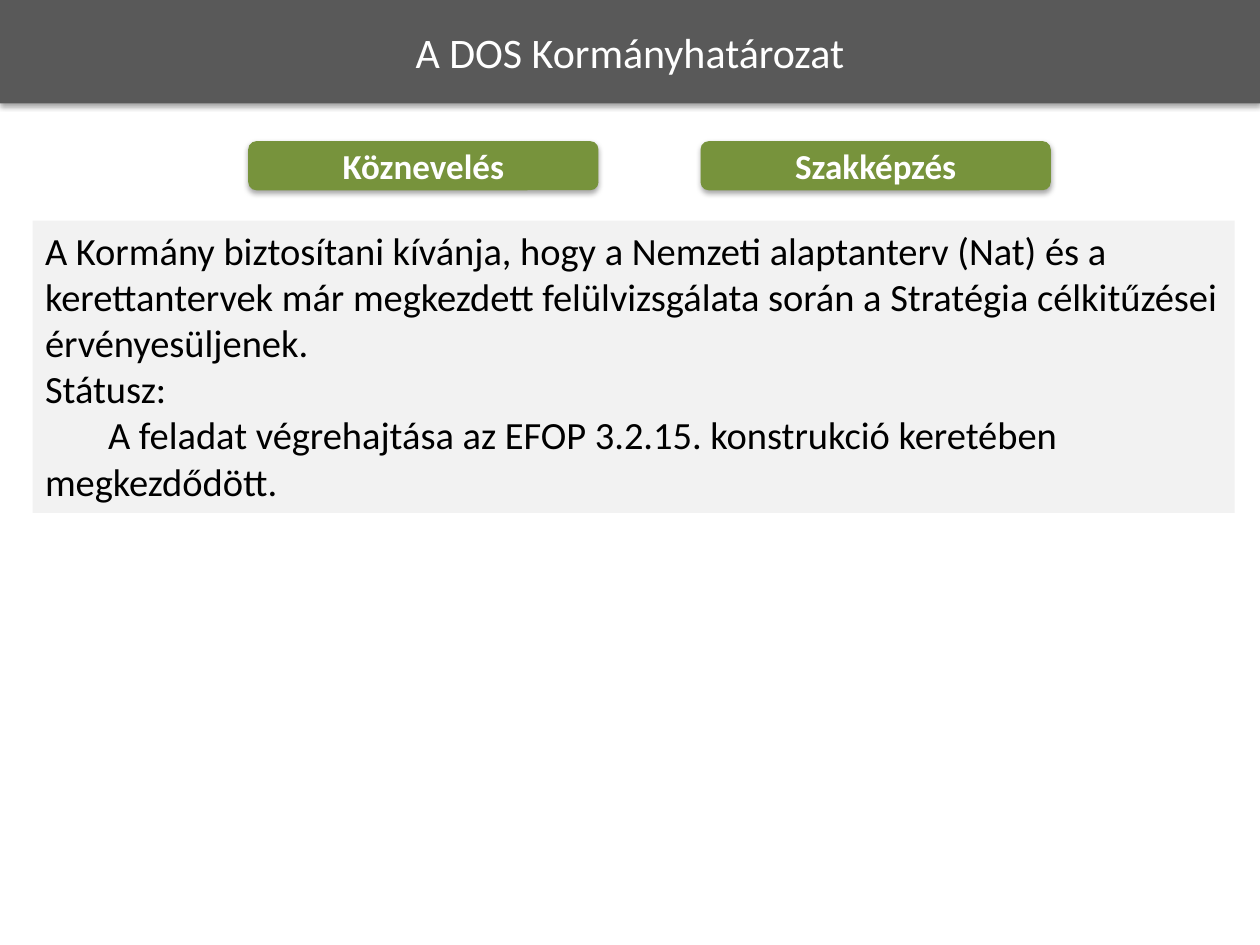
from lxml import etree
from pptx import Presentation
from pptx.dml.color import RGBColor
from pptx.enum.shapes import MSO_SHAPE as Shape
from pptx.enum.text import MSO_ANCHOR as Anchor, MSO_AUTO_SIZE as AutoSize, PP_ALIGN as Align
from pptx.oxml import parse_xml
from pptx.oxml.ns import nsdecls, qn
from pptx.util import Inches, Pt

COLOURS = {"banner": "595959", "tag": "77933C", "panel": "F2F2F2",
           "light": "FFFFFF", "dark": "000000", "shadow": "000000"}
WIDTH, HEIGHT = 10, 7.5


class Deck:
    """Holds the style and the current slide; lengths are shares of the slide."""
    font = "Calibri"

    def __init__(self):
        self.prs = Presentation()
        self.prs.slide_width, self.prs.slide_height = Inches(WIDTH), Inches(HEIGHT)
        self.slide = self.prs.slides.add_slide(self.prs.slide_layouts[6])

    def block(self, kind, area, fill, paragraphs, size, colour,
              align=Align.LEFT, anchor=Anchor.MIDDLE, bold=False):
        left, top, width, height = area
        block = self.slide.shapes.add_shape(
            kind, Inches(left * WIDTH), Inches(top * HEIGHT),
            Inches(width * WIDTH), Inches(height * HEIGHT))
        block.shadow.inherit = False
        block.fill.solid()
        block.fill.fore_color.rgb = RGBColor.from_string(COLOURS[fill])
        block.line.fill.background()
        frame = block.text_frame
        frame.word_wrap = True
        frame.vertical_anchor = anchor
        for number, text in enumerate(paragraphs):
            paragraph = frame.add_paragraph() if number else frame.paragraphs[0]
            paragraph.text = text
            paragraph.alignment = align
            font = paragraph.font
            font.name, font.size, font.bold = self.font, Pt(size), bold
            font.color.rgb = RGBColor.from_string(COLOURS[colour])
        return block

    def drop_shadow(self, block):
        effects = block._element.spPr.find(qn("a:effectLst"))
        shadow = parse_xml(
            f'<a:outerShdw {nsdecls("a")} blurRad="{Pt(3.1)}" dist="{Pt(1.8)}" '
            'dir="5400000" rotWithShape="0"/>')
        colour = etree.SubElement(shadow, qn("a:srgbClr"), val=COLOURS["shadow"])
        etree.SubElement(colour, qn("a:alpha"), val="35000")
        effects.append(shadow)

    def banner(self, area, title):
        self.drop_shadow(self.block(Shape.RECTANGLE, area, "banner", [title],
                                    24, "light", Align.CENTER))

    def tag(self, area, label):
        self.drop_shadow(self.block(Shape.ROUNDED_RECTANGLE, area, "tag", [label],
                                    20, "light", Align.CENTER, bold=True))

    def panel(self, area, paragraphs, indented):
        panel = self.block(Shape.RECTANGLE, area, "panel", paragraphs,
                           22, "dark", anchor=Anchor.TOP)
        panel.text_frame.auto_size = AutoSize.SHAPE_TO_FIT_TEXT
        properties = panel.text_frame.paragraphs[indented]._p.get_or_add_pPr()
        properties.set("marL", "0")
        properties.set("indent", str(Inches(0.5)))

    def save(self):
        self.prs.save("out.pptx")


def main():
    deck = Deck()

    # Title banner
    deck.banner((0, 0, 1, 0.82 / HEIGHT), "A DOS Kormányhatározat")

    # Decision and its status
    deck.panel((0.026, 1.75 / HEIGHT, 0.954, 2.32 / HEIGHT), [
        "A Kormány biztosítani kívánja, hogy a Nemzeti alaptanterv (Nat) és a "
        "kerettantervek már megkezdett felülvizsgálata során a Stratégia "
        "célkitűzései érvényesüljenek.",
        "Státusz:",
        "A feladat végrehajtása az EFOP 3.2.15. konstrukció keretében megkezdődött.",
    ], indented=2)

    # Sector tags, evenly spaced
    for column, sector in enumerate(["Köznevelés", "Szakképzés"]):
        deck.tag((0.197 + column * 0.359, 1.12 / HEIGHT, 0.278, 0.39 / HEIGHT), sector)

    deck.save()


if __name__ == "__main__":
    main()
